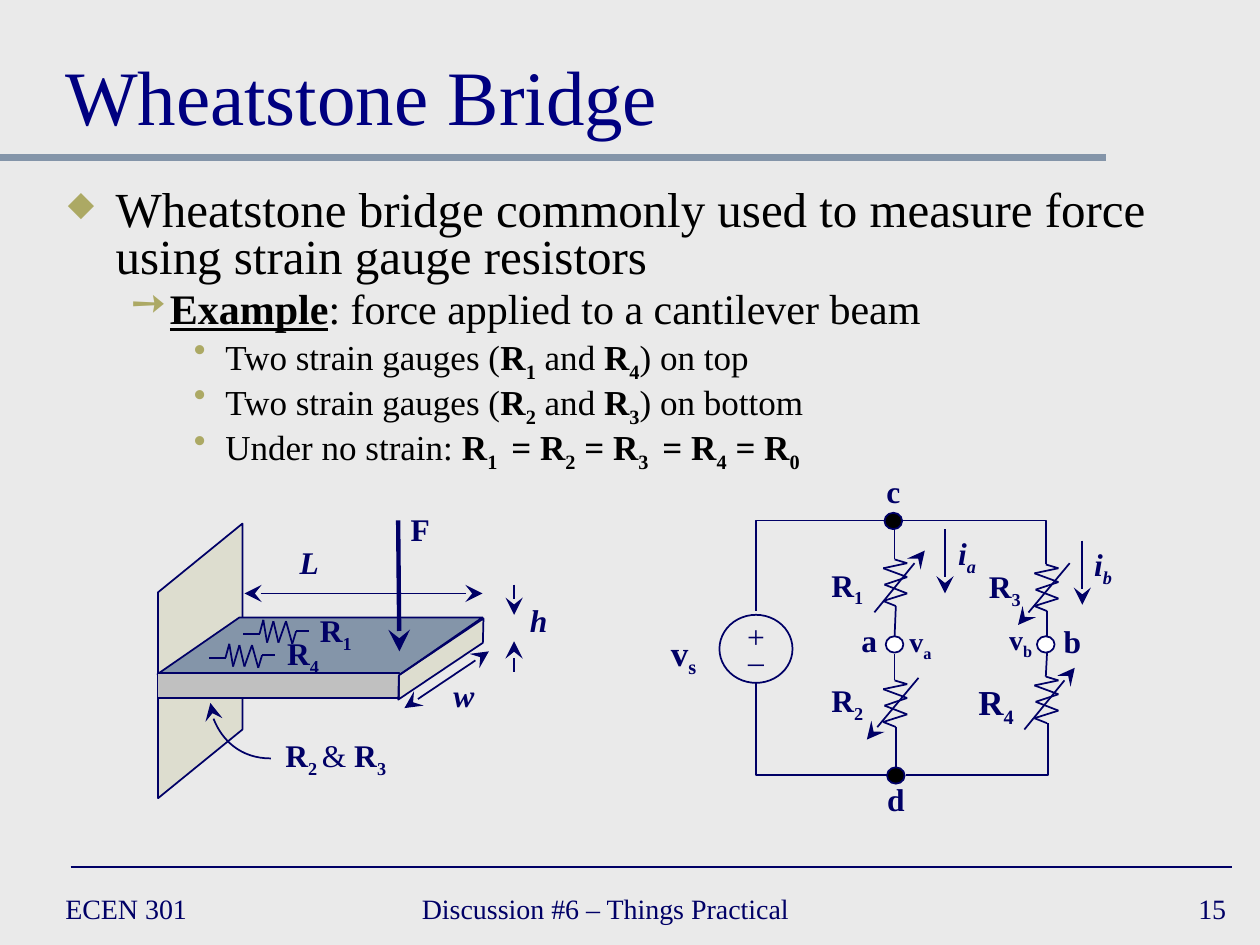
"""Builds the Wheatstone bridge slide."""
from itertools import pairwise
from lxml.etree import SubElement
from pptx import Presentation
from pptx.dml.color import RGBColor
from pptx.enum.shapes import MSO_CONNECTOR, MSO_SHAPE
from pptx.enum.text import MSO_ANCHOR, MSO_AUTO_SIZE, PP_ALIGN
from pptx.oxml.ns import qn
from pptx.util import Inches, Pt

FONT = "Times New Roman"
PAPER = RGBColor(0xEA, 0xEA, 0xEA)
INK = RGBColor(0x00, 0x00, 0x66)
NAVY = RGBColor(0x00, 0x00, 0x80)
BLACK = RGBColor(0x00, 0x00, 0x00)
WHITE = RGBColor(0xFF, 0xFF, 0xFF)
STEEL = RGBColor(0x84, 0x95, 0xA9)
SILVER = RGBColor(0xC0, 0xC0, 0xC0)
OLIVE = RGBColor(0xAC, 0xA9, 0x64)

LEVELS = [("◆", 70, 0.38, 0.38, 28), ("➙", 100, 0.81, 0.31, 24), ("•", 100, 1.25, 0.25, 20)]
COIL = [(0, 0), (0.1, 0.03), (-0.09, 0.07), (0.1, 0.14),
        (-0.08, 0.2), (0.1, 0.27), (-0.09, 0.33), (0.01, 0.37)]
GAUGE = [(0, 0), (0.13, 0), (0.16, -0.11), (0.19, 0.07), (0.24, -0.1),
         (0.28, 0.07), (0.34, -0.1), (0.39, 0.08), (0.42, -0.02), (0.52, -0.02)]


def inches(values):
    """Turn plain numbers into lengths."""
    return [Inches(value) for value in values]


def symbol(letter, mark, style="b"):
    """Return the spans of a letter with a subscript."""
    return [(letter, style), (mark, style + "s")]


def add_spans(para, spans, size, color):
    """Add runs; style letters are b, i, u and s for subscript."""
    for text, style in spans:
        span = para.add_run()
        span.text = text
        font = span.font
        font.name, font.size, font.color.rgb = FONT, Pt(size), color
        font.bold, font.italic, font.underline = (key in style for key in "biu")
        if "s" in style:
            font._element.set("baseline", "-25000")


def add_text(page, place, text, size, color=INK, align=PP_ALIGN.LEFT, anchor=MSO_ANCHOR.MIDDLE):
    """Add a wrapped line of plain text."""
    frame = page.shapes.add_textbox(*inches(place)).text_frame
    frame.word_wrap = True
    frame.vertical_anchor = anchor
    frame.paragraphs[0].alignment = align
    add_spans(frame.paragraphs[0], [(text, "")], size, color)


def add_label(page, place, spans, size=18):
    """Add a centred diagram label."""
    frame = page.shapes.add_textbox(*inches(place)).text_frame
    frame.word_wrap = False
    frame.auto_size = MSO_AUTO_SIZE.SHAPE_TO_FIT_TEXT
    frame.paragraphs[0].alignment = PP_ALIGN.CENTER
    add_spans(frame.paragraphs[0], spans, size, INK)


def add_body(page, items):
    """Add the bulleted text from (level, spans) items."""
    frame = page.shapes.add_textbox(*inches((0.44, 1.46, 9.14, 2.25))).text_frame
    frame.word_wrap = True
    for index, (level, spans) in enumerate(items):
        para = frame.add_paragraph() if index else frame.paragraphs[0]
        bullet, percent, margin, hang, size = LEVELS[level]
        properties = para._p.get_or_add_pPr()
        properties.set("marL", str(Inches(margin)))
        properties.set("indent", str(-Inches(hang)))
        tint = SubElement(properties, qn("a:buClr"))
        SubElement(tint, qn("a:srgbClr"), val=str(OLIVE))
        SubElement(properties, qn("a:buSzPct"), val=str(percent * 1000))
        SubElement(properties, qn("a:buChar"), char=bullet)
        para.level = level
        para.line_spacing = 0.8
        para.space_before = Pt(0.2 * size if index else 0)
        add_spans(para, spans, size, BLACK)


def add_line(page, start, end, color=INK, width=1, ends=(), preset="line"):
    """Add a connector; ends holds headEnd and tailEnd for arrowheads."""
    line = page.shapes.add_connector(MSO_CONNECTOR.STRAIGHT, *inches(start + end))
    line.line.color.rgb = color
    line.line.width = Pt(width)
    properties = line._element.spPr
    properties.find(qn("a:prstGeom")).set("prst", preset)
    for end_name in ends:
        SubElement(line.line._get_or_add_ln(), qn("a:" + end_name), type="stealth", w="lg", len="lg")
    SubElement(properties, qn("a:effectLst"))


def add_zigzag(page, start, offsets):
    """Add a resistor as a chain of lines."""
    points = [(start[0] + x, start[1] + y) for x, y in offsets]
    for first, second in pairwise(points):
        add_line(page, first, second)


def add_solid(page, kind, place, fill=None, alpha=None, adjust=None, turn=0, flip=False):
    """Add an outlined preset shape."""
    shape = page.shapes.add_shape(kind, *inches(place))
    shape.shadow.inherit = False
    shape.line.color.rgb, shape.line.width = INK, Pt(1)
    shape.rotation = turn
    if fill is None:
        shape.fill.background()
    else:
        shape.fill.solid()
        shape.fill.fore_color.rgb = fill
    if alpha:
        tint = shape._element.spPr.find(qn("a:solidFill"))[0]
        SubElement(tint, qn("a:alpha"), val=str(alpha * 1000))
    if adjust:
        shape.adjustments[0] = adjust
    if flip:
        shape._element.spPr.xfrm.set("flipH", "1")


def add_circuit(page):
    """Draw the bridge circuit."""
    for left, top, fill in [(7.02, 4.07, BLACK), (7.04, 6.09, BLACK),
                            (7.03, 5.05, WHITE), (8.23, 5.05, WHITE)]:
        add_solid(page, MSO_SHAPE.OVAL, (left, top, 0.14, 0.13), fill)
    add_solid(page, MSO_SHAPE.OVAL, (5.71, 4.88, 0.58, 0.54))
    for start, end in [((7.04, 6.15), (6, 5.42)), ((7.03, 4.13), (6, 4.85)),
                       ((7.19, 6.15), (8.32, 5.74)), ((7.17, 4.13), (8.3, 4.48))]:
        add_line(page, start, end, preset="bentConnector2")
    for start, end in [((7.11, 6.09), (7.11, 5.77)), ((7.1, 4.2), (7.1, 4.44)),
                       ((7.1, 5.05), (7.11, 4.81)), ((7.1, 5.19), (7.1, 5.4)),
                       ((8.31, 5.18), (8.3, 5.37)), ((8.31, 5.05), (8.31, 4.85))]:
        add_line(page, start, end)
    for start in [(7.1, 4.44), (7.1, 5.4), (8.3, 4.48), (8.3, 5.37)]:
        add_zigzag(page, start, COIL)
    for start, end in [((6.94, 4.86), (7.34, 4.37)), ((8.13, 5.79), (8.53, 5.3)),
                       ((7.29, 5.38), (6.88, 5.87)), ((8.49, 4.47), (8.08, 4.96)),
                       ((7.5, 4.2), (7.5, 4.71)), ((8.59, 4.29), (8.59, 4.8))]:
        add_line(page, start, end, ends=["tailEnd"])
    for left, top, mark in [(6.49, 4.44, "1"), (6.49, 5.36, "2"), (7.74, 4.45, "3")]:
        add_label(page, (left, top, 0.47, 0.4), symbol("R", mark))
    add_label(page, (7.66, 5.35, 0.49, 0.43), symbol("R", "4"), 20)
    add_label(page, (5.22, 4.96, 0.41, 0.43), symbol("v", "s"), 20)
    add_label(page, (7.11, 4.91, 0.39, 0.37), symbol("v", "a"), 16)
    add_label(page, (7.9, 4.89, 0.4, 0.37), symbol("v", "b"), 16)
    add_label(page, (7.5, 4.19, 0.35, 0.4), symbol("i", "a", "bi"))
    add_label(page, (8.58, 4.28, 0.35, 0.4), symbol("i", "b", "bi"))
    for left, top, text, style in [(5.83, 4.85, "+", ""), (5.83, 4.96, "_", ""),
                                   (6.73, 4.88, "a", "b"), (8.34, 4.89, "b", "b"),
                                   (6.92, 3.7, "c", "b"), (6.94, 6.14, "d", "b")]:
        add_label(page, (left, top, 0.34, 0.4), [(text, style)])


def add_beam(page):
    """Draw the cantilever beam with its gauges."""
    slanted = MSO_SHAPE.PARALLELOGRAM
    add_solid(page, slanted, (0.5, 4.91, 2.18, 0.67), OLIVE, 20, 0.814, 90, True)
    add_solid(page, slanted, (1.25, 4.9, 2.58, 0.45), STEEL, adjust=1.447)
    add_solid(page, MSO_SHAPE.RECTANGLE, (1.25, 5.34, 1.92, 0.2), SILVER)
    add_solid(page, slanted, (3.17, 4.9, 0.66, 0.66), OLIVE, 20, 0.708, 91.4, True)
    add_line(page, (3.16, 4.13), (3.17, 5.17), width=2.5, ends=["tailEnd"])
    for start in [(1.66, 5.22), (1.93, 5.03)]:
        add_zigzag(page, start, GAUGE)
    add_line(page, (2.15, 6.02), (1.67, 5.58), ends=["tailEnd"], preset="curvedConnector2")
    for start, end in [((1.94, 4.71), (3.83, 4.71)), ((3.21, 5.62), (3.88, 5.17))]:
        add_line(page, start, end, ends=["headEnd", "tailEnd"])
    for start, end in [((4.08, 4.64), (4.08, 4.88)), ((4.08, 5.33), (4.08, 5.09))]:
        add_line(page, start, end, ends=["tailEnd"])
    add_label(page, (2.17, 4.98, 0.47, 0.4), symbol("R", "4"))
    add_label(page, (2.43, 4.8, 0.47, 0.4), symbol("R", "1"))
    add_label(page, (2.15, 5.79, 1.03, 0.4), symbol("R", "2 ") + [("& ", "")] + symbol("R", "3"))
    for left, top, text, style in [(3.16, 4, "F", "b"), (2.28, 4.26, "L", "bi"),
                                   (3.5, 5.32, "w", "bi"), (4.1, 4.72, "h", "bi")]:
        add_label(page, (left, top, 0.35, 0.4), [(text, style)])


def main():
    """Build and save the deck."""
    deck = Presentation()
    deck.slide_width, deck.slide_height = inches((10, 7.5))
    page = deck.slides.add_slide(deck.slide_layouts[6])
    page.background.fill.solid()
    page.background.fill.fore_color.rgb = PAPER
    add_line(page, (0, 1.25), (8.78, 1.25), STEEL, 4)
    add_line(page, (0.56, 6.88), (9.78, 6.88))
    add_text(page, (0.42, 7, 2.17, 0.42), "ECEN 301", 16)
    add_text(page, (3.25, 7, 3.83, 0.42), "Discussion #6 – Things Practical", 16)
    add_text(page, (7.75, 7, 2.08, 0.42), "15", 16, align=PP_ALIGN.RIGHT)
    add_text(page, (0.42, 0.17, 9.17, 1), "Wheatstone Bridge", 44, NAVY, anchor=MSO_ANCHOR.BOTTOM)
    items = [(0, [("Wheatstone bridge commonly used to measure force using strain gauge resistors", "")]),
             (1, [("Example", "bu"), (": force applied to a cantilever beam", "")])]
    for first, second, side in [("1", "4", "top"), ("2", "3", "bottom")]:
        items.append((2, [("Two strain gauges (", "")] + symbol("R", first) + [(" and ", "")]
                      + symbol("R", second) + [(f") on {side}", "")]))
    equation = symbol("R", "1 ")
    for mark in ("2", "3 ", "4", "0"):
        equation += symbol(" = R", mark)
    items.append((2, [("Under no strain: ", "")] + equation))
    add_body(page, items)
    add_circuit(page)
    add_beam(page)
    deck.save("out.pptx")


if __name__ == "__main__":
    main()
